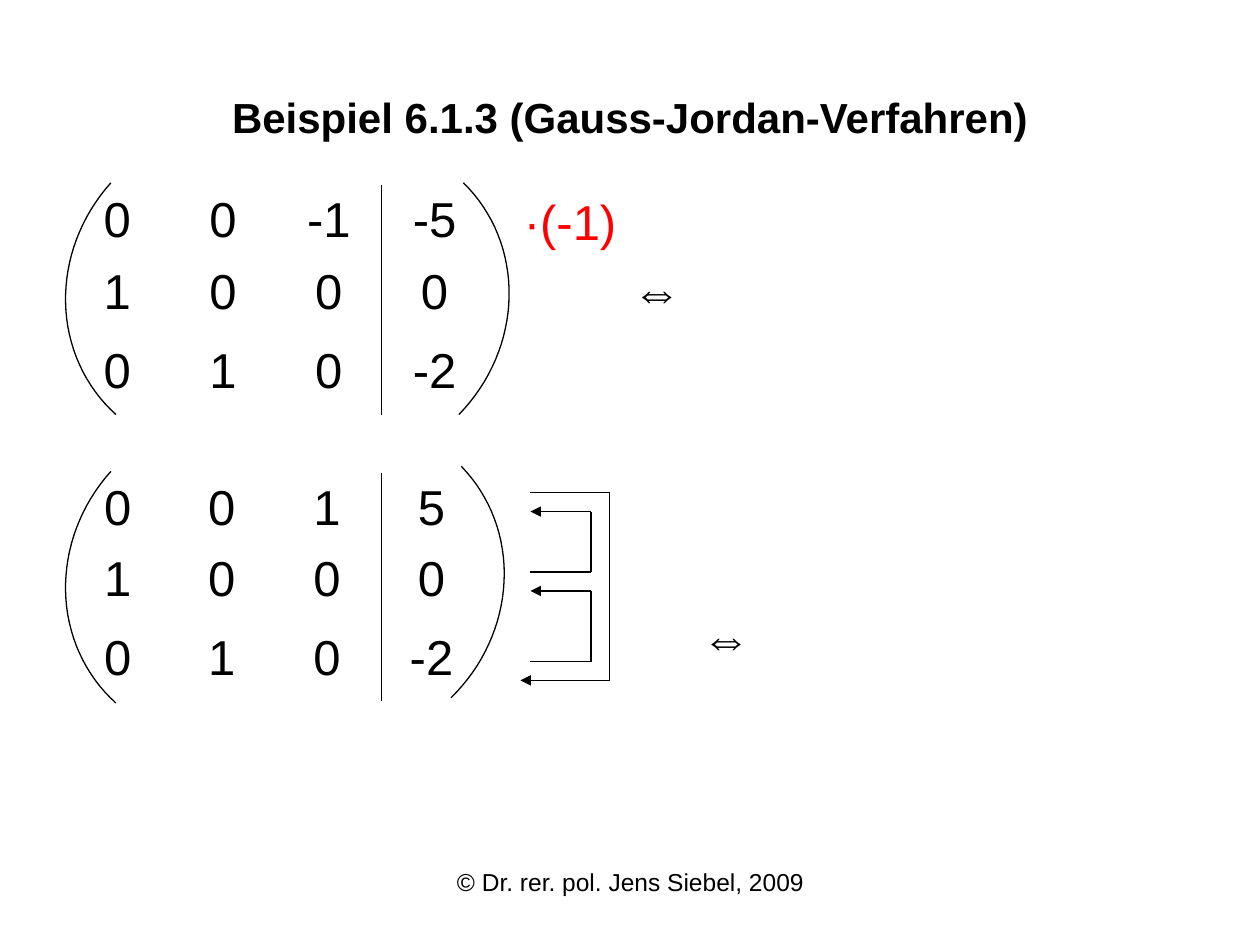
from dataclasses import dataclass
from itertools import pairwise
from math import cos, pi, sin

from lxml import etree
from pptx import Presentation
from pptx.dml.color import RGBColor
from pptx.enum.shapes import MSO_CONNECTOR
from pptx.enum.text import MSO_ANCHOR, MSO_AUTO_SIZE, PP_ALIGN
from pptx.oxml.ns import qn
from pptx.util import Pt

STRAIGHT = MSO_CONNECTOR.STRAIGHT
MIDDLE = MSO_ANCHOR.MIDDLE
GROW = MSO_AUTO_SIZE.SHAPE_TO_FIT_TEXT
LEFT, CENTER = PP_ALIGN.LEFT, PP_ALIGN.CENTER
TITLE_ONLY = 5
PLAIN_TABLE_STYLE = "{2D5ABB26-0587-4C30-8999-92F81FD0307C}"
ARC_STEPS = 32


@dataclass(frozen=True)
class Theme:
    font: str = "Arial"
    ink: str = "000000"
    operation: str = "FF0000"
    title_size: float = 24
    body_size: float = 28
    footer_size: float = 14
    thin: float = 0.75
    divider: float = 1


THEME = Theme()


def write(frame, text, size, color=THEME.ink, align=LEFT, bold=False):
    paragraph = frame.paragraphs[0]
    paragraph.alignment = align
    run = paragraph.add_run()
    run.text = text
    run.font.name = THEME.font
    run.font.size = Pt(size)
    run.font.bold = bold
    run.font.color.rgb = RGBColor.from_string(color)


def place(element, left, top, width, height):
    element.left, element.top = Pt(left), Pt(top)
    element.width, element.height = Pt(width), Pt(height)


def add_title(slide, text):
    title = slide.shapes.title
    place(title, 36, 21.6, 648, 90)
    title.text_frame.vertical_anchor = MIDDLE
    write(title.text_frame, text, THEME.title_size, align=CENTER, bold=True)


def add_label(slide, text, box, size=THEME.body_size, color=THEME.ink, align=LEFT):
    label = slide.shapes.add_textbox(*map(Pt, box))
    label.text_frame.word_wrap = True
    label.text_frame.auto_size = GROW
    write(label.text_frame, text, size, color, align)


def add_cell_border(cell, side):
    properties = cell._tc.get_or_add_tcPr()
    border = etree.Element(qn(f"a:{side}"), w=str(Pt(THEME.divider)))
    fill = etree.SubElement(border, qn("a:solidFill"))
    etree.SubElement(fill, qn("a:srgbClr"), val=THEME.ink)
    properties.insert(0, border)


def add_matrix(slide, entries, left, top, widths, heights):
    frame = slide.shapes.add_table(
        len(heights), len(widths), Pt(left), Pt(top), Pt(sum(widths)), Pt(sum(heights)))
    matrix = frame.table
    matrix.first_row = matrix.horz_banding = False
    matrix._tbl.tblPr.find(qn("a:tableStyleId")).text = PLAIN_TABLE_STYLE
    for column, width in zip(matrix.columns, widths):
        column.width = Pt(width)
    for row, height, values in zip(matrix.rows, heights, entries):
        row.height = Pt(height)
        cells = list(row.cells)
        for cell, value in zip(cells, values):
            cell.fill.background()
            cell.vertical_anchor = MIDDLE
            write(cell.text_frame, value, THEME.body_size, align=CENTER)
        add_cell_border(cells[-2], "lnR")
        add_cell_border(cells[-1], "lnL")


def add_parenthesis(slide, left, top, rotation):
    width, height = 90.72, 96.48
    angles = [step * pi / 2 / ARC_STEPS for step in range(ARC_STEPS + 1)]
    points = [(Pt(left + width * sin(a)), Pt(top + height * (1 - cos(a)))) for a in angles]
    builder = slide.shapes.build_freeform(*points[0])
    builder.add_line_segments(points[1:], close=False)
    parenthesis = builder.convert_to_shape()
    parenthesis.shadow.inherit = False
    parenthesis.fill.background()
    parenthesis.line.color.rgb = RGBColor.from_string(THEME.ink)
    parenthesis.line.width = Pt(THEME.thin)
    parenthesis.rotation = rotation


def add_line(slide, start, end, arrow=False):
    line = slide.shapes.add_connector(STRAIGHT, *map(Pt, (*start, *end)))
    line.line.color.rgb = RGBColor.from_string(THEME.ink)
    line.line.width = Pt(THEME.thin)
    if arrow:
        etree.SubElement(line.line._get_or_add_ln(), qn("a:tailEnd"), type="triangle")
    etree.SubElement(line._element.spPr, qn("a:effectLst"))


def add_row_swap(slide, source_y, target_y, spine_x, tip_x=303.12):
    route = [(303.12, source_y), (spine_x, source_y), (spine_x, target_y), (tip_x, target_y)]
    for start, end in pairwise(route):
        add_line(slide, start, end, arrow=end == route[-1])


def main():
    deck = Presentation()
    deck.slide_width, deck.slide_height = Pt(720), Pt(540)
    slide = deck.slides.add_slide(deck.slide_layouts[TITLE_ONLY])

    add_label(slide, "© Dr. rer. pol. Jens Siebel, 2009", (246.24, 491.76, 228.24, 37.44),
              THEME.footer_size, align=CENTER)
    add_title(slide, "Beispiel 6.1.3 (Gauss-Jordan-Verfahren)")

    lower_rows = [["1", "0", "0", "0"], ["0", "1", "0", "-2"]]
    add_matrix(slide, [["0", "0", "-1", "-5"], *lower_rows], 36.72, 105.84,
               [60.48] * 4, [40.32, 40.32, 49.68])
    add_matrix(slide, [["0", "0", "1", "5"], *lower_rows], 36.72, 270,
               [61.2, 57.6, 62.64, 56.88], [39.6, 39.6, 48.96])

    for left, top, rotation in [(19.44, 122.4, 222), (218.16, 122.4, 44.3),
                                (19.44, 287.28, 222), (215.28, 284.4, 45.8)]:
        add_parenthesis(slide, left, top, rotation)

    add_label(slide, "⇔", (354.24, 145.44, 108, 41.04))
    add_label(slide, "⇔", (393.84, 343.44, 108, 41.04))
    add_label(slide, "·(-1)", (292.32, 105.84, 108, 41.04), color=THEME.operation)

    add_row_swap(slide, 326.88, 292.32, 337.68)
    add_row_swap(slide, 378, 337.68, 337.68)
    add_row_swap(slide, 281.52, 388.8, 348.48, tip_x=297.36)

    deck.save("out.pptx")


if __name__ == "__main__":
    main()
